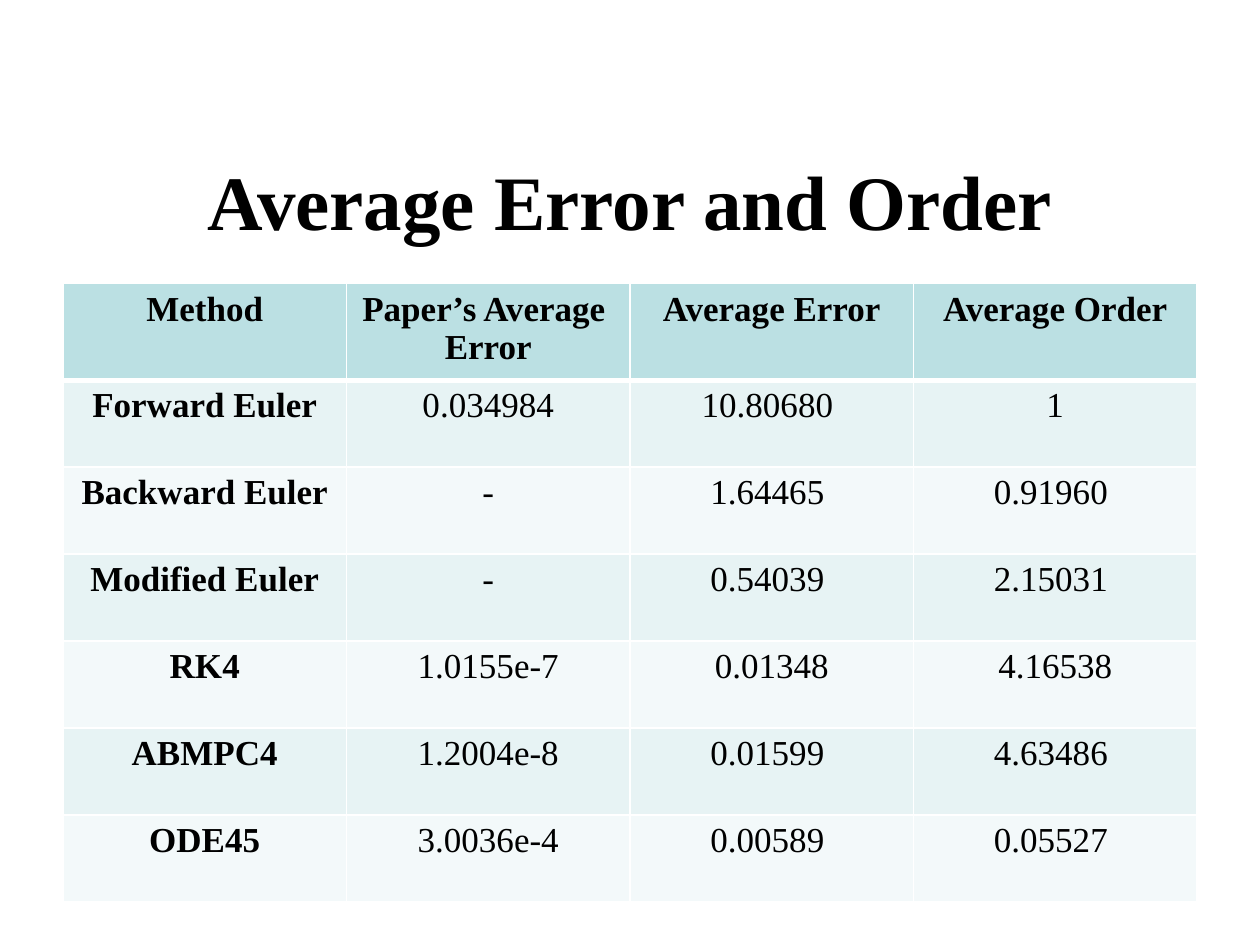
from dataclasses import dataclass

from lxml.etree import SubElement
from pptx import Presentation
from pptx.dml.color import RGBColor
from pptx.enum.text import MSO_ANCHOR as Anchor, PP_ALIGN as Align
from pptx.oxml.ns import qn
from pptx.util import Pt

COLORS = {
    "text": "000000",
    "header": "BBE0E3",
    "odd": "E7F3F4",
    "even": "F3F9FA",
    "border": "FFFFFF",
}
FONT = "Times New Roman"
COLUMN_WIDTH = 162
ROW_HEIGHT = 49.7


@dataclass(frozen=True)
class MethodRow:
    method: str
    paper_error: str
    error: str
    order: str

    def values(self) -> tuple[str, ...]:
        return self.method, self.paper_error, self.error, self.order


HEADER = MethodRow("Method", "Paper’s Average \vError", "Average Error", "Average Order")
METHODS = [
    MethodRow("Forward Euler", "0.034984", "10.80680 ", "1"),
    MethodRow("Backward Euler", "-", "1.64465 ", "0.91960 "),
    MethodRow("Modified Euler", "-", "0.54039 ", "2.15031 "),
    MethodRow("RK4", "1.0155e-7", "0.01348", "4.16538"),
    MethodRow("ABMPC4", "1.2004e-8", "0.01599 ", "4.63486 "),
    MethodRow("ODE45", "3.0036e-4", "0.00589 ", "0.05527 "),
]


def write_centered(frame, text: str, size: float, bold: bool) -> None:
    frame.text = text
    for paragraph in frame.paragraphs:
        paragraph.alignment = Align.CENTER
        font = paragraph.font
        font.name, font.size, font.bold = FONT, Pt(size), bold
        font.color.rgb = RGBColor.from_string(COLORS["text"])


def set_borders(cell, top: float, bottom: float) -> None:
    properties = cell._tc.get_or_add_tcPr()
    for side, width in (("L", 1), ("R", 1), ("T", top), ("B", bottom)):
        line = SubElement(properties, qn(f"a:ln{side}"), w=str(Pt(width)))
        fill = SubElement(line, qn("a:solidFill"))
        SubElement(fill, qn("a:srgbClr"), val=COLORS["border"])


def add_title(slide, text: str) -> None:
    title = slide.shapes.add_textbox(Pt(54), Pt(96), Pt(612), Pt(36))
    frame = title.text_frame
    frame.word_wrap = True
    frame.vertical_anchor = Anchor.MIDDLE
    write_centered(frame, text, 44, True)


def add_results(slide, rows: list[MethodRow]) -> None:
    column_count = len(HEADER.values())
    results = slide.shapes.add_table(
        len(rows), column_count, Pt(36), Pt(162),
        Pt(COLUMN_WIDTH * column_count), Pt(ROW_HEIGHT * len(rows)),
    ).table
    for column in results.columns:
        column.width = Pt(COLUMN_WIDTH)
    for row_index, method_row in enumerate(rows):
        results.rows[row_index].height = Pt(ROW_HEIGHT)
        is_header = row_index == 0
        band = "header" if is_header else "odd" if row_index % 2 else "even"
        for column_index, value in enumerate(method_row.values()):
            cell = results.cell(row_index, column_index)
            write_centered(cell.text_frame, value, 20, is_header or column_index == 0)
            set_borders(cell, 3 if row_index == 1 else 1, 3 if is_header else 1)
            cell.fill.solid()
            cell.fill.fore_color.rgb = RGBColor.from_string(COLORS[band])


def main() -> None:
    presentation = Presentation()
    presentation.slide_width, presentation.slide_height = Pt(720), Pt(540)
    slide = presentation.slides.add_slide(presentation.slide_layouts[6])
    add_title(slide, "Average Error and Order")
    add_results(slide, [HEADER, *METHODS])
    presentation.save("out.pptx")


if __name__ == "__main__":
    main()
